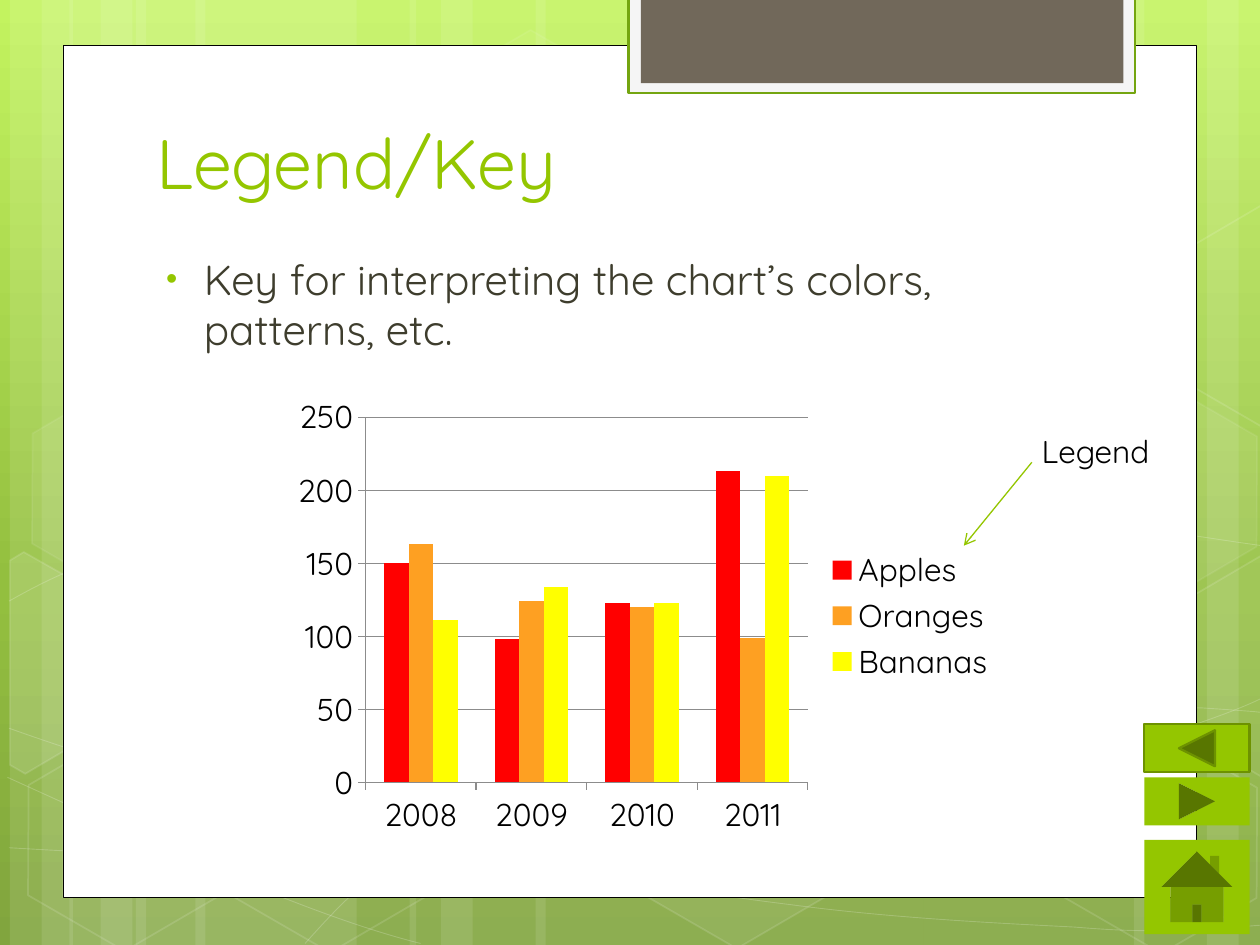
from pptx import Presentation
from pptx import util as u
from pptx.chart import data as chart_data
from pptx.dml import color
from pptx.enum import chart as chart_enum
from pptx.enum import shapes, text
from pptx.oxml import ns
from lxml import etree

COLORS = {
    "white": "FFFFFF", "black": "000000", "green": "94C600", "dark_green": "6D9200",
    "tab_line": "74A510", "tab": "F5F5F5", "brown": "71685A", "body": "3E3D2D",
    "gray": "8C8C8C", "apple": "FF0000", "orange": "FEA022", "banana": "FFFF00",
    "sky": "C3F35F", "leaf": "93BF3F", "moss": "81A53E",
}
RGB = {name: color.RGBColor.from_string(value) for name, value in COLORS.items()}
FONT = "Quicksand"
KIND = shapes.MSO_SHAPE


def style(shape, fill=None, line=None, width=1, fill_alpha=100, line_alpha=100):
    """Set fill and line, each with its opacity in percent."""
    shape.shadow.inherit = False
    for part, name, alpha, query in (
            (shape.fill, fill, fill_alpha, "a:solidFill/a:srgbClr"),
            (shape.line.fill, line, line_alpha, "a:ln/a:solidFill/a:srgbClr")):
        if name is None:
            part.background()
            continue
        part.solid()
        part.fore_color.rgb = RGB[name]
        if alpha < 100:
            tint = shape.element.spPr.xpath(query)[0]
            etree.SubElement(tint, ns.qn("a:alpha"), val=str(alpha * 1000))
    if line:
        shape.line.width = u.Pt(width)


def add_text(words, place, size, name, anchor=text.MSO_ANCHOR.TOP):
    """Add a one-run text box and return its paragraph."""
    box = page.shapes.add_textbox(*map(u.Cm, place))
    box.text_frame.word_wrap = True
    box.text_frame.vertical_anchor = anchor
    para = box.text_frame.paragraphs[0]
    span = para.add_run()
    span.text = words
    span.font.name = FONT
    span.font.size = u.Pt(size)
    span.font.color.rgb = RGB[name]
    return para


deck = Presentation()
deck.slide_width, deck.slide_height = u.Cm(25.4), u.Cm(19.05)
page = deck.slides.add_slide(deck.slide_layouts[6])

# Background gradient, top to bottom
backdrop = page.background.fill
backdrop.gradient()
backdrop.gradient_angle = 270
stops = page.element.find(".//" + ns.qn("a:gsLst"))
for stop in list(stops):
    stops.remove(stop)
for position, name in ((0, "sky"), (62, "leaf"), (100, "moss")):
    stop = etree.SubElement(stops, ns.qn("a:gs"), pos=str(position * 1000))
    etree.SubElement(stop, ns.qn("a:srgbClr"), val=COLORS[name])

# Translucent vertical bands
for left, width in ((2.74, 4.45), (0.2, 1.27), (0.84, 2.11), (3.94, 4.45),
                    (1.4, 1.27), (2.03, 2.11), (18.62, 4.45), (24.33, 1.27),
                    (22.86, 2.11), (10.8, 7.82), (8.26, 1.27), (8.89, 2.11)):
    band = page.shapes.add_shape(KIND.RECTANGLE, u.Cm(left), 0, u.Cm(width), deck.slide_height)
    style(band, "white", fill_alpha=10)

# Thin waves: a start point, then three Bezier points per segment
waves = [
    [(0.18, 17.09), (1.55, 17.17), (2.92, 17.25), (4.83, 17.22), (6.73, 17.2),
     (9.09, 17.15), (11.63, 16.89), (14.17, 16.64), (17.78, 16.15), (20.12, 15.67),
     (22.43, 15.19), (24.82, 14.43), (25.58, 14)],
    [(0.18, 12.12), (0.91, 11.71), (1.65, 11.33), (3.07, 10.95), (4.52, 10.57),
     (6.58, 10.01), (8.81, 9.83), (11.07, 9.65), (13.82, 9.63), (16.61, 9.83),
     (19.41, 10.03), (24.05, 10.82), (25.58, 11.02)],
    [(0.15, 15.67), (3.23, 17.07), (6.27, 18.47), (8.48, 19.02)],
    [(0.18, 14.68), (0.97, 14.96), (1.78, 15.24), (3.25, 15.65), (4.72, 16.03),
     (6.93, 16.66), (9.07, 17.09), (11.18, 17.53), (13.84, 17.98), (15.95, 18.24),
     (18.06, 18.52), (20.32, 18.62), (21.67, 18.69), (22.99, 18.8), (23.34, 18.75),
     (24, 18.75), (24.66, 18.72), (25.12, 18.67), (25.58, 18.64)],
    [(6.15, 19.02), (6.6, 18.52), (7.06, 18.01), (7.67, 17.55), (8.28, 17.09),
     (9.14, 16.59), (9.86, 16.23), (10.57, 15.88), (11, 15.72), (11.94, 15.47),
     (12.85, 15.21), (14.55, 14.86), (15.44, 14.68), (16.36, 14.5), (16.48, 14.5),
     (17.27, 14.45), (18.06, 14.38), (19.3, 14.3), (20.17, 14.27), (21.06, 14.25),
     (22.5, 14.27), (22.5, 14.27), (23.1, 14.27), (23.6, 14.27), (24.21, 14.27),
     (24.66, 14.3), (25.1, 14.33), (25.32, 14.35), (25.55, 14.38), (25.48, 14.35),
     (25.55, 14.38)],
]
for wave in waves:
    builder = page.shapes.build_freeform(*map(u.Cm, wave[0]))
    builder.add_line_segments([tuple(map(u.Cm, point)) for point in wave[1:]], close=False)
    curve = builder.convert_to_shape()
    # Join every three straight steps into one cubic segment
    steps = curve.element.xpath(".//a:lnTo")
    outline = steps[0].getparent()
    for first in range(0, len(steps), 3):
        segment = etree.SubElement(outline, ns.qn("a:cubicBezTo"))
        for step in steps[first:first + 3]:
            segment.append(step[0])
            outline.remove(step)
    style(curve, line="white", width=0.5, line_alpha=20)

# Hexagons: left, top, fill opacity, line opacity
for left, top, fill_alpha, line_alpha in (
        (8.48, 0.91, 4, 8), (12.62, 14.96, 6, 12), (0.28, 15.01, 0, 12),
        (0.36, 7.92, 7, 8), (4.42, 15.04, 0, 12), (19.13, 11.51, 10, 12),
        (21.18, 15.06, 0, 12), (21.18, 7.98, 7, 8)):
    hexagon = page.shapes.add_shape(KIND.HEXAGON, *map(u.Cm, (left, top, 4.45, 3.86)))
    hexagon.adjustments[0] = 0.285
    hexagon.rotation = 30
    style(hexagon, "white" if fill_alpha else None, "white", 1, fill_alpha, line_alpha)

# Hexagons cut by the slide edges
for fill_alpha, corners in (
        (10, [(0.2, 11.3), (0.48, 11.13), (2.44, 12.24), (2.41, 14.48), (0.51, 15.6), (0.2, 15.42)]),
        (4, [(23.52, 12.32), (25.43, 11.2), (25.63, 11.33), (25.63, 15.57), (25.45, 15.67), (23.52, 14.55)]),
        (0, [(23.52, 5.26), (25.43, 4.14), (25.65, 4.27), (25.63, 8.51), (25.45, 8.61), (23.52, 7.49)])):
    builder = page.shapes.build_freeform(*map(u.Cm, corners[0]))
    builder.add_line_segments([tuple(map(u.Cm, corner)) for corner in corners[1:]])
    style(builder.convert_to_shape(), "white" if fill_alpha else None, "white", 1, fill_alpha, 12)

# White panel and the tab on its top edge
for place, fill, line, width in (
        ((1.27, 0.91, 22.86, 17.19), "white", "black", 0.5),
        ((12.67, -0.05, 10.21, 1.93), "tab", "tab_line", 1.25),
        ((12.92, -0.05, 9.73, 1.73), "brown", None, 0)):
    style(page.shapes.add_shape(KIND.RECTANGLE, *map(u.Cm, place)), fill, line, width)

# Title and bullet
add_text("Legend/Key", (2.9, 1.05, 19.51, 3.18), 40, "green", text.MSO_ANCHOR.BOTTOM)
para = add_text("Key for interpreting the chart’s colors, patterns, etc.",
                (2.89, 4.98, 18.82, 2.87), 24, "body")
props = para._p.get_or_add_pPr()
props.set("marL", str(u.Cm(0.97)))
props.set("indent", str(u.Cm(-0.76)))
bullet_color = etree.SubElement(props, ns.qn("a:buClr"))
etree.SubElement(bullet_color, ns.qn("a:srgbClr"), val=COLORS["green"])
etree.SubElement(props, ns.qn("a:buSzPct"), val="76000")
etree.SubElement(props, ns.qn("a:buFont"), typeface="Arial")
etree.SubElement(props, ns.qn("a:buChar"), char="•")

# Fruit chart
fruit = chart_data.CategoryChartData()
fruit.categories = ["2008", "2009", "2010", "2011"]
fruit.add_series("Apples", (150, 98, 123, 213))
fruit.add_series("Oranges", (163, 124, 120, 99))
fruit.add_series("Bananas", (111, 134, 123, 210))
chart = page.shapes.add_chart(chart_enum.XL_CHART_TYPE.COLUMN_CLUSTERED,
                              *map(u.Cm, (5.71, 7.83, 14.61, 9.17)), fruit).chart
chart.has_title = False
chart.font.name, chart.font.size = FONT, u.Pt(18)
chart.font.color.rgb = RGB["black"]
chart.has_legend = True
chart.legend.position = chart_enum.XL_LEGEND_POSITION.RIGHT
chart.legend.include_in_layout = False
plot = chart.plots[0]
plot.gap_width, plot.overlap, plot.vary_by_categories = 150, 0, False
for series, name in zip(plot.series, ("apple", "orange", "banana")):
    series.format.fill.solid()
    series.format.fill.fore_color.rgb = RGB[name]
chart.value_axis.has_major_gridlines = True
for axis in (chart.category_axis, chart.value_axis):
    axis.major_tick_mark = chart_enum.XL_TICK_MARK.OUTSIDE
for part in (chart.category_axis, chart.value_axis, chart.value_axis.major_gridlines):
    part.format.line.color.rgb = RGB["gray"]
    part.format.line.width = u.Pt(0.75)

# Arrow and label pointing at the legend
arrow = page.shapes.add_connector(shapes.MSO_CONNECTOR.STRAIGHT,
                                  *map(u.Cm, (20.8, 9.32, 19.43, 11)))
arrow.line.color.rgb = RGB["green"]
arrow.line.width = u.Pt(0.75)
etree.SubElement(arrow.element.spPr.find(ns.qn("a:ln")), ns.qn("a:tailEnd"), type="arrow")
etree.SubElement(arrow.element.spPr, ns.qn("a:effectLst"))
add_text("Legend", (20.75, 8.59, 2.97, 1.8), 18, "black")

# Navigation buttons
for kind, top, height, line in (
        (KIND.ACTION_BUTTON_HOME, 16.93, 1.9, None),
        (KIND.ACTION_BUTTON_FORWARD_OR_NEXT, 15.67, 0.97, None),
        (KIND.ACTION_BUTTON_BACK_OR_PREVIOUS, 14.6, 0.97, "dark_green")):
    button = page.shapes.add_shape(kind, *map(u.Cm, (23.07, top, 2.12, height)))
    style(button, "green", line, 1.25)

deck.save("out.pptx")
